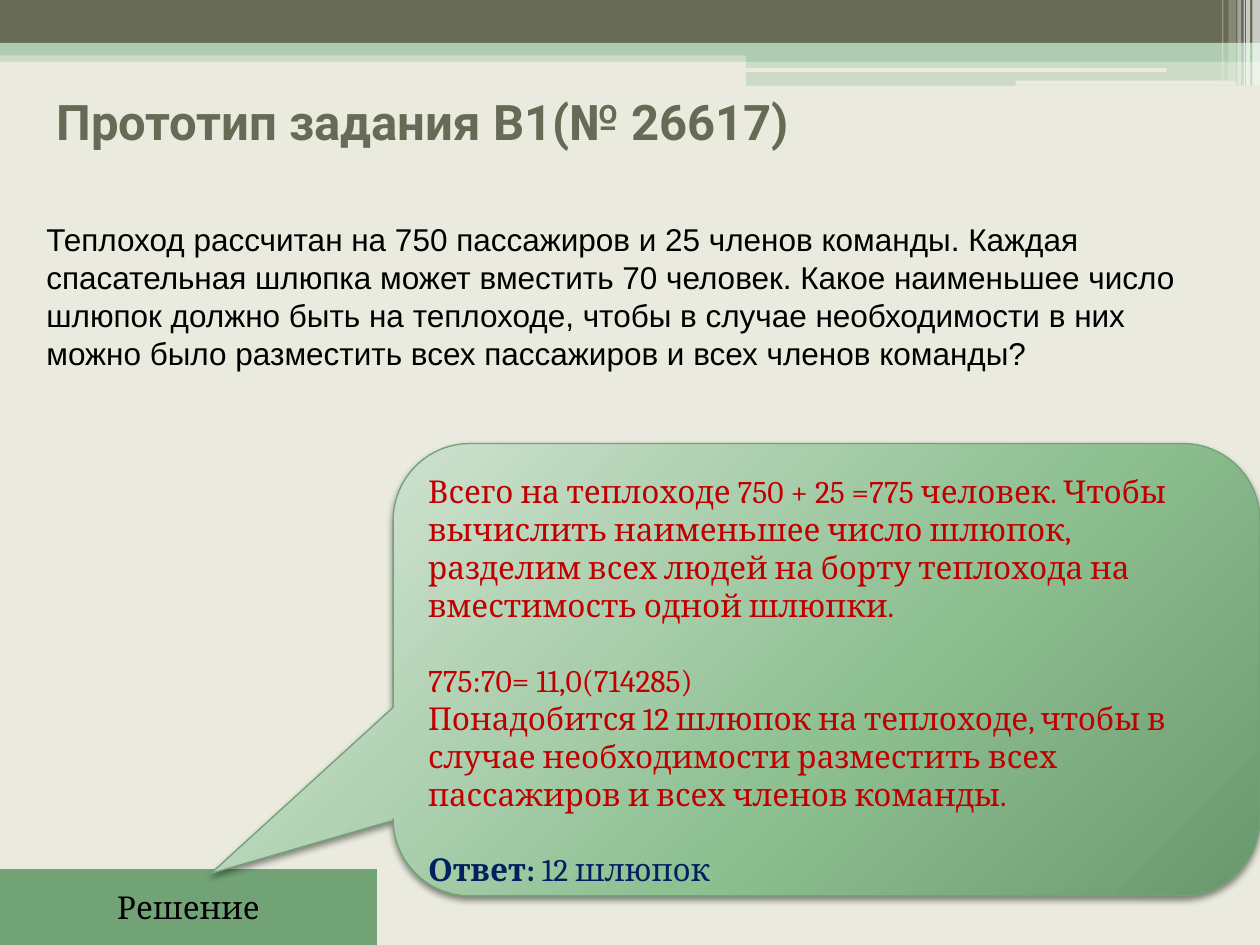
import pptx
import pptx.dml.color
import pptx.enum.shapes
import pptx.enum.text
import pptx.util
from lxml import etree
from pptx.oxml import parse_xml
from pptx.oxml.ns import nsdecls, qn

COLS, ROWS = 100, 75
C = {
    "paper": "EAEBDE", "olive": "676A55", "mint": "B0CCB0", "white": "FFFFFF",
    "green": "72A376", "pale": "CEE1CF", "leaf": "8EC092", "moss": "6A986E",
    "black": "000000", "red": "C00000", "navy": "002060",
}
SHAPE = pptx.enum.shapes.MSO_SHAPE
ALIGN = pptx.enum.text.PP_ALIGN
ANCHOR = pptx.enum.text.MSO_ANCHOR
Pt = pptx.util.Pt


def rgb(name):
    return pptx.dml.color.RGBColor.from_string(C[name])


def assign(obj, values):
    for key, value in values.items():
        setattr(obj, key, value)


class Deck:
    """Holds the style and the current slide, and draws each kind of element on a grid."""

    def __init__(self):
        self.prs = pptx.Presentation()
        assign(self.prs, {"slide_width": pptx.util.Inches(10), "slide_height": pptx.util.Inches(7.5)})
        self.s = self.prs.slides.add_slide(self.prs.slide_layouts[6])
        fill = self.s.background.fill
        fill.solid()
        fill.fore_color.rgb = rgb("paper")

    def box(self, x, y, w, h):
        cw, rh = self.prs.slide_width / COLS, self.prs.slide_height / ROWS
        return [round(v) for v in (x * cw, y * rh, w * cw, h * rh)]

    def shape(self, kind, at, color, alpha=100):
        sp = self.s.shapes.add_shape(kind, *self.box(*at))
        sp.shadow.inherit = False
        sp.fill.solid()
        sp.fill.fore_color.rgb = rgb(color)
        sp.line.fill.background()
        if alpha < 100:
            clr = sp.fill._xPr.find(qn("a:solidFill"))[0]
            etree.SubElement(clr, qn("a:alpha")).set("val", str(alpha * 1000))
        return sp

    def text(self, sp, paragraphs, font, frame=None):
        tf = sp.text_frame
        assign(tf, {"word_wrap": True, "vertical_anchor": ANCHOR.TOP, **(frame or {})})
        for i, (runs, layout) in enumerate(paragraphs):
            p = tf.paragraphs[0] if i == 0 else tf.add_paragraph()
            assign(p, {"alignment": ALIGN.LEFT, **layout})
            for words, changes in runs:
                r = p.add_run()
                r.text = words
                look = {**font, **changes}
                r.font.color.rgb = rgb(look.pop("color"))
                assign(r.font, look)

    def textbox(self, at, paragraphs, font, frame=None):
        self.text(self.s.shapes.add_textbox(*self.box(*at)), paragraphs, font, frame)

    def callout(self, at, adjustments, stops, paragraphs, font):
        sp = self.shape(SHAPE.ROUNDED_RECTANGULAR_CALLOUT, at, "leaf")
        for i, value in enumerate(adjustments):
            sp.adjustments[i] = value
        sp.line.color.rgb = rgb("green")
        sp.line.width = Pt(0.75)
        marks = "".join(
            f'<a:gs pos="{pos * 1000}"><a:srgbClr val="{C[name]}"/></a:gs>' for pos, name in stops)
        spPr = sp.fill._xPr
        spPr.replace(spPr.find(qn("a:solidFill")), parse_xml(
            f'<a:gradFill {nsdecls("a")} rotWithShape="1"><a:gsLst>{marks}</a:gsLst>'
            '<a:path path="circle"><a:fillToRect l="-40000" t="-90000" r="140000" b="190000"/>'
            '</a:path></a:gradFill>'))
        spPr.find(qn("a:effectLst")).append(parse_xml(
            f'<a:outerShdw {nsdecls("a")} blurRad="{Pt(4)}" dist="{Pt(2)}" dir="5400000" '
            f'rotWithShape="0"><a:srgbClr val="{C["black"]}"><a:alpha val="45000"/>'
            '</a:srgbClr></a:outerShdw>'))
        self.text(sp, paragraphs, font)


def main():
    d = Deck()
    for at, color, alpha in [
        ((0, 4, 100, 0.9), "mint", 50),
        ((0, 0, 100, 3.4), "olive", 100),
        ((0, 3.4, 100, 1), "mint", 100),
        ((59.2, 3.9, 40.8, 1), "mint", 100),
        ((59.2, 4.8, 40.8, 2), "mint", 50),
    ]:
        d.shape(SHAPE.RECTANGLE, at, color, alpha)
    for at in [(59.1, 5.4, 33.5, 0.3), (80.6, 6.4, 17.5, 0.4)]:
        d.shape(SHAPE.ROUNDED_RECTANGLE, at, "paper")
    for x, w, h, alpha in [
        (99.4, 0.6, 6.8, 65), (98.9, 0.3, 6.8, 65), (98.7, 0.1, 6.8, 60),
        (98.2, 0.3, 6.8, 40), (97.5, 0.6, 6.4, 20), (97, 0.1, 6.4, 30),
    ]:
        d.shape(SHAPE.RECTANGLE, (x, 0, w, h), "white", alpha)

    d.textbox((3.5, 6.8, 90, 10.2), [([("Прототип задания B1(№ 26617)", {})], {})],
              {"size": Pt(28), "name": "Roboto", "color": "olive", "bold": True})

    serif = {"size": Pt(18), "name": "Cambria", "color": "black", "bold": False}
    button = d.shape(SHAPE.ACTION_BUTTON_CUSTOM, (0, 69, 29.9, 6), "green")
    d.text(button, [([("Решение", {})], {"alignment": ALIGN.CENTER})], serif,
           {"word_wrap": False, "vertical_anchor": ANCHOR.MIDDLE})

    gap = {"space_before": Pt(21.6)}
    d.callout(
        (31.2, 35.2, 68.8, 35.9), (-0.71, 0.45, 0.17),
        [(0, "pale"), (55, "leaf"), (100, "moss")],
        [
            ([("Всего на теплоходе 750 + 25 =775 человек. Чтобы вычислить наименьшее число шлюпок, "
               "разделим всех людей на борту теплохода на вместимость одной шлюпки.", {})], {}),
            ([("775:70= 11,0(714285)", {})], gap),
            ([("Понадобится 12 шлюпок на теплоходе, чтобы в случае необходимости разместить "
               "всех пассажиров и всех членов команды.", {})], {}),
            ([("Ответ:", {"color": "navy", "bold": True}), (" 12 шлюпок", {"color": "navy"})], gap),
        ],
        {**serif, "color": "red"})

    d.textbox(
        (2.7, 17, 92.6, 13.1),
        [([("Теплоход рассчитан на 750 пассажиров и 25 членов команды. Каждая спасательная шлюпка "
            "может вместить 70 человек. Какое наименьшее число шлюпок должно быть на теплоходе, "
            "чтобы в случае необходимости в них можно было разместить всех пассажиров и всех "
            "членов команды?", {})], {"line_spacing": Pt(21.6)})],
        {**serif, "name": "Arial"})
    d.prs.save("out.pptx")


if __name__ == "__main__":
    main()
